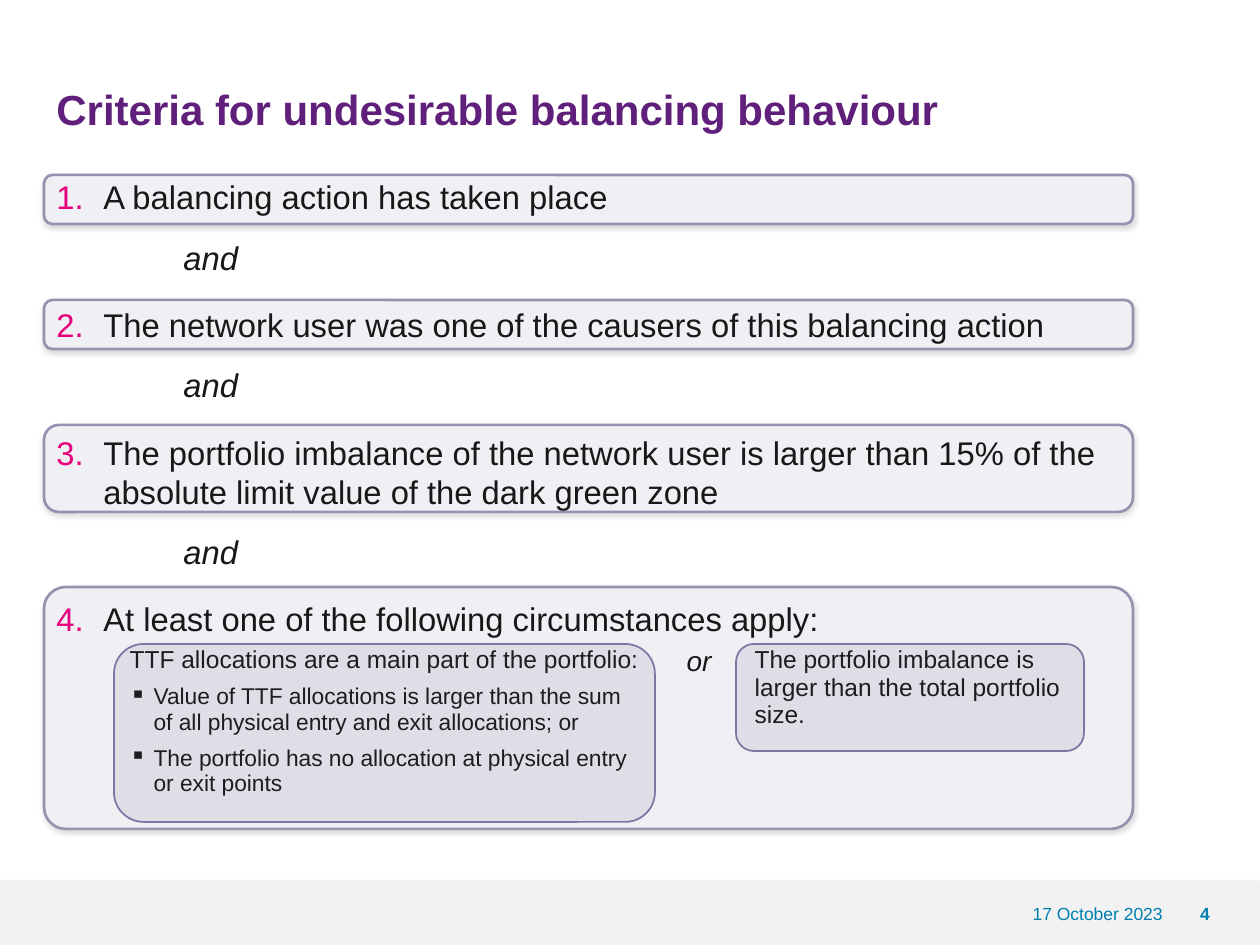
import lxml.etree
import pptx
import pptx.dml.color
import pptx.enum.shapes
import pptx.enum.text
import pptx.oxml.ns
import pptx.util

RGB = pptx.dml.color.RGBColor
SHAPE = pptx.enum.shapes.MSO_SHAPE
ALIGN = pptx.enum.text.PP_ALIGN
MID = pptx.enum.text.MSO_ANCHOR.MIDDLE
Pt = pptx.util.Pt

INK = RGB(0x18, 0x18, 0x18)
PURPLE = RGB(0x5F, 0x1F, 0x7A)
PINK = RGB(0xE5, 0x00, 0x7D)
BLUE = RGB(0x00, 0x7F, 0xAE)
GREY = RGB(0xF2, 0xF2, 0xF2)
PALE = RGB(0xF0, 0xEF, 0xF4)
EDGE = RGB(0x96, 0x90, 0xB1)
DARK = RGB(0x51, 0x4A, 0x71)
RIM = RGB(0x7D, 0x75, 0xA4)
BLACK = RGB(0, 0, 0)

PLAIN = "{2D5ABB26-0587-4C30-8999-92F81FD0307C}"
ITEMS = [
    "A balancing action has taken place",
    "The network user was one of the causers of this balancing action",
    "The portfolio imbalance of the network user is larger than 15% of the "
    "absolute limit value of the dark green zone",
    "At least one of the following circumstances apply:",
]
PANELS = [(5, 49, 0.17), (130, 49, 0.17), (255, 87, 0.17), (417, 242, 0.09)]
TESTS = [
    "Value of TTF allocations is larger than the sum of all physical entry "
    "and exit allocations; or",
    "The portfolio has no allocation at physical entry or exit points",
]


def px(n):
    return round(n * 914400 / 126)


def node(up, tag, **vals):
    part = lxml.etree.SubElement(up, pptx.oxml.ns.qn(tag))
    for key, val in vals.items():
        part.set(key, str(val))
    return part


def shade(shape, blur, dist, alpha):
    glow = node(node(shape._element.spPr, "a:effectLst"), "a:outerShdw",
                blurRad=Pt(blur), dist=Pt(dist), dir=5400000,
                algn="ctr", rotWithShape=0)
    node(node(glow, "a:srgbClr", val=BLACK), "a:alpha", val=alpha * 1000)


def block(slide, kind, box, fill, edge=None, width=1):
    shape = slide.shapes.add_shape(kind, *map(px, box))
    shape.fill.solid()
    shape.fill.fore_color.rgb = fill
    if edge is None:
        shape.line.fill.background()
    else:
        shape.line.color.rgb = edge
        shape.line.width = Pt(width)
    return shape


def write(par, text, size, color=INK, **font):
    run = par.add_run()
    run.text = text
    run.font.color.rgb = color
    for key, val in {"name": "Arial", "size": Pt(size), **font}.items():
        setattr(run.font, key, val)


def mark(par, left, hang, color=None, num=None):
    props = par._p.get_or_add_pPr()
    props.set("marL", str(px(left)))
    props.set("indent", str(-px(hang)))
    if color is not None:
        node(node(props, "a:buClr"), "a:srgbClr", val=color)
    if num:
        node(props, "a:buAutoNum", type="arabicPeriod", startAt=num)
    elif hang:
        node(props, "a:buChar", char="▪")


def frame(slide, box, **vals):
    text = slide.shapes.add_textbox(*map(px, box)).text_frame
    for key, val in {"word_wrap": True, **vals}.items():
        setattr(text, key, val)
    return text


def title(slide, box):
    text = frame(slide, box, vertical_anchor=MID)
    write(text.paragraphs[0], "Criteria for undesirable balancing behaviour",
          24, PURPLE, bold=True)


def steps(slide, box):
    left, top, wide, high = box
    for down, tall, curve in reversed(PANELS):
        shape = block(slide, SHAPE.ROUNDED_RECTANGLE,
                      (left, top + down, wide, tall), PALE, EDGE, 1.5)
        shape.adjustments[0] = curve
        shade(shape, 3, 1, 15)
    text = frame(slide, (left, top + 1, wide + 10, high))
    par = text.paragraphs[0]
    for num, item in enumerate(ITEMS, 1):
        if num > 1:
            par = text.add_paragraph()
            par.space_before = Pt(12)
            mark(par, 127, 0)
            write(par, "and", 18.7, italic=True)
            par = text.add_paragraph()
            par.space_before = Pt(16)
        mark(par, 47, 47, PINK, num)
        write(par, item, 18.7)


def cases(slide, box):
    left, top, wide, high = box
    grid = slide.shapes.add_table(1, 3, *map(px, box)).table
    grid._tbl.tblPr.find(pptx.oxml.ns.qn("a:tableStyleId")).text = PLAIN
    grid.first_row = grid.horz_banding = False
    for col, size in zip(grid.columns, (539, 86, wide - 625)):
        col.width = px(size)
    cells = grid.rows[0].cells
    for cell in cells:
        cell.fill.background()
    main, link, other = (cell.text_frame for cell in cells)
    write(main.paragraphs[0],
          "TTF allocations are a main part of the portfolio:", 14)
    for test in TESTS:
        par = main.add_paragraph()
        par.space_before = Pt(6)
        mark(par, 24, 24)
        write(par, test, 13)
    link.paragraphs[0].alignment = ALIGN.CENTER
    write(link.paragraphs[0], "or", 16, italic=True)
    write(other.paragraphs[0], "The portfolio imbalance is larger than "
          "the total portfolio size.", 14)
    for side, size, tall in ((-3, 541, 178), (619, 348, 107)):
        shape = block(slide, SHAPE.ROUNDED_RECTANGLE,
                      (left + side, top + 4, size, tall), DARK, RIM)
        shape.shadow.inherit = False
        tint = shape._element.spPr.find(".//" + pptx.oxml.ns.qn("a:srgbClr"))
        node(tint, "a:alpha", val=10000)


def footer(slide, box):
    left, top, wide, high = box
    shade(block(slide, SHAPE.RECTANGLE, box, GREY), 4, 2, 46)
    parts = (("17 October 2023", 872, 303, ALIGN.RIGHT, False),
             ("4", 1175, 60, ALIGN.CENTER, True))
    for words, side, size, align, bold in parts:
        text = frame(slide, (left + side, top, size, high),
                     vertical_anchor=MID)
        text.paragraphs[0].alignment = align
        write(text.paragraphs[0], words, 10, BLUE, bold=bold)


def main():
    deck = pptx.Presentation()
    deck.slide_width, deck.slide_height = px(1260), px(945)
    slide = deck.slides.add_slide(deck.slide_layouts[6])
    footer(slide, (0, 882, 1260, 63))
    title(slide, (44, 49, 1160, 120))
    steps(slide, (44, 170, 1089, 611))
    cases(slide, (117, 640, 989, 181))
    deck.save("out.pptx")


if __name__ == "__main__":
    main()
